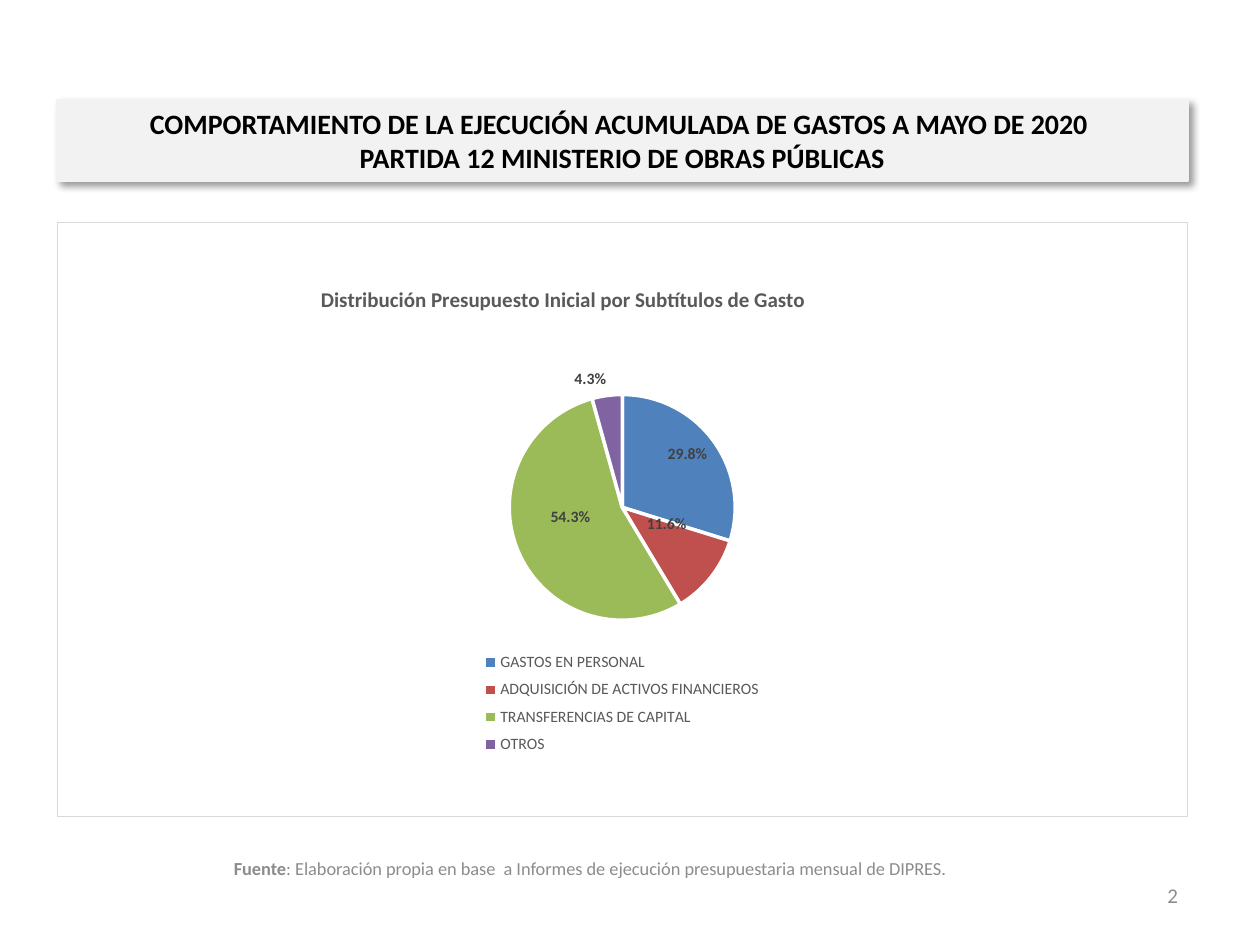
import dataclasses

import lxml.etree
import pptx
import pptx.chart.data
import pptx.dml.color
import pptx.enum.chart
import pptx.enum.shapes
import pptx.enum.text
import pptx.oxml
import pptx.oxml.ns
import pptx.util

Cm = pptx.util.Cm
Pt = pptx.util.Pt
qn = pptx.oxml.ns.qn
ALIGN = pptx.enum.text.PP_ALIGN


@dataclasses.dataclass(frozen=True)
class Theme:
    font: str = "Calibri"
    black: str = "000000"
    white: str = "FFFFFF"
    band: str = "F2F2F2"
    border: str = "D9D9D9"
    muted: str = "8C8C8C"
    chart_text: str = "595959"
    label_text: str = "404040"
    slices: tuple = ("4F81BD", "C0504D", "9BBB59", "8064A2")
    heading_size: float = 16
    chart_title_size: float = 12
    chart_size: float = 10
    small_size: float = 9
    source_size: float = 10.5
    number_size: float = 12


THEME = Theme()


def rgb(value):
    return pptx.dml.color.RGBColor.from_string(value)


def set_font(font, size, color, bold=None):
    font.name = THEME.font
    font.size = Pt(size)
    font.color.rgb = rgb(color)
    font.bold = bold


def add_heading(page, box, text):
    """Grey title band with a soft shadow."""
    band = page.shapes.add_shape(pptx.enum.shapes.MSO_SHAPE.RECTANGLE, *box)
    band.fill.solid()
    band.fill.fore_color.rgb = rgb(THEME.band)
    band.line.color.rgb = rgb(THEME.band)
    band.line.width = Pt(0.75)
    band.shadow.inherit = False
    effects = band._element.spPr.find(qn("a:effectLst"))
    shadow = lxml.etree.SubElement(
        effects, qn("a:outerShdw"), blurRad=str(Pt(4)), dist=str(Pt(3)),
        dir="2700000", algn="tl", rotWithShape="0")
    color = lxml.etree.SubElement(shadow, qn("a:srgbClr"), val=THEME.black)
    lxml.etree.SubElement(color, qn("a:alpha"), val="40000")

    frame = band.text_frame
    frame.word_wrap = True
    frame.vertical_anchor = pptx.enum.text.MSO_ANCHOR.MIDDLE
    para = frame.paragraphs[0]
    para.text = text
    para.alignment = ALIGN.CENTER
    set_font(para.font, THEME.heading_size, THEME.black, True)


def add_note(page, box, spans, size, alignment):
    """Muted one-line text; spans are (text, bold) pairs."""
    frame = page.shapes.add_textbox(*box).text_frame
    frame.word_wrap = True
    frame.vertical_anchor = pptx.enum.text.MSO_ANCHOR.MIDDLE
    para = frame.paragraphs[0]
    para.alignment = alignment
    set_font(para.font, size, THEME.muted)
    for text, bold in spans:
        span = para.add_run()
        span.text = text
        span.font.bold = bold


def manual_layout(x, y, width=None, height=None, target=None, edge=True):
    """A c:layout element, in fractions of the chart."""
    layout = lxml.etree.Element(qn("c:layout"))
    manual = lxml.etree.SubElement(layout, qn("c:manualLayout"))
    settings = [("layoutTarget", target)]
    if edge:
        settings += [("xMode", "edge"), ("yMode", "edge")]
    settings += [("x", x), ("y", y), ("w", width), ("h", height)]
    for tag, value in settings:
        if value is not None:
            lxml.etree.SubElement(manual, qn("c:" + tag), val=str(value))
    return layout


def place(parent, layout, after=None):
    """Replace the layout of a chart part, keeping the schema order."""
    for old in parent.findall(qn("c:layout")):
        parent.remove(old)
    if after is None:
        parent.insert(0, layout)
    else:
        parent.find(qn(after)).addnext(layout)


def place_label(series, index, position, shift):
    """Set the position of one percentage label and nudge it."""
    label = series.points[index].data_label
    set_font(label.font, THEME.small_size, THEME.label_text, True)
    label.position = position
    node = next(item for item in series._element.iter(qn("c:dLbl"))
                if item.find(qn("c:idx")).get("val") == str(index))
    node.find(qn("c:showVal")).set("val", "0")
    node.find(qn("c:showPercent")).set("val", "1")
    number = lxml.etree.Element(
        qn("c:numFmt"), formatCode="0.0%", sourceLinked="0")
    node.find(qn("c:txPr")).addprevious(number)
    if shift:
        place(node, manual_layout(*shift, edge=False), after="c:idx")


def add_spending_chart(page, box, title, shares):
    """Pie of spending shares with a stacked legend below."""
    data = pptx.chart.data.CategoryChartData()
    data.categories = list(shares)
    data.add_series("Series 1", list(shares.values()))
    chart = page.shapes.add_chart(
        pptx.enum.chart.XL_CHART_TYPE.PIE, *box, data).chart
    set_font(chart.font, THEME.chart_size, THEME.black)

    # Background and border
    chart._chartSpace.find(qn("c:chart")).addnext(pptx.oxml.parse_xml(
        f'<c:spPr {pptx.oxml.ns.nsdecls("c", "a")}>'
        f'<a:solidFill><a:srgbClr val="{THEME.white}"/></a:solidFill>'
        f'<a:ln w="{Pt(0.75)}"><a:solidFill><a:srgbClr val="{THEME.border}"/>'
        '</a:solidFill></a:ln></c:spPr>'))

    # Title
    chart.has_title = True
    para = chart.chart_title.text_frame.paragraphs[0]
    para.text = title
    set_font(para.font, THEME.chart_title_size, THEME.chart_text, True)
    place(chart.chart_title._element, manual_layout(0.23, 0.1), after="c:tx")

    # Legend
    chart.has_legend = True
    legend = chart.legend
    legend.position = pptx.enum.chart.XL_LEGEND_POSITION.BOTTOM
    legend.include_in_layout = False
    set_font(legend.font, THEME.small_size, THEME.chart_text)
    place(legend._element, manual_layout(0.3, 0.71, 0.4, 0.2),
          after="c:legendPos")

    # Slices
    plot = chart.plots[0]
    plot.vary_by_categories = True
    place(chart._chartSpace.chart.plotArea,
          manual_layout(0, 0.29, 1, 0.38, target="inner"))
    series = plot.series[0]
    for index, color in enumerate(THEME.slices):
        look = series.points[index].format
        look.fill.solid()
        look.fill.fore_color.rgb = rgb(color)
        look.line.color.rgb = rgb(THEME.white)
        look.line.width = Pt(2)

    # Percentages
    labels = series.data_labels
    labels.show_value = False
    labels.show_percentage = True
    labels.number_format = "0.0%"
    labels.number_format_is_linked = False
    set_font(labels.font, THEME.small_size, THEME.label_text, True)
    spot = pptx.enum.chart.XL_LABEL_POSITION
    placements = ((spot.INSIDE_END, None), (spot.CENTER, (0, -0.03)),
                  (spot.CENTER, (0, -0.02)), (spot.OUTSIDE_END, None))
    for index, (position, shift) in enumerate(placements):
        place_label(series, index, position, shift)


def main():
    deck = pptx.Presentation()
    deck.slide_width, deck.slide_height = Cm(25.4), Cm(19.05)
    page = deck.slides.add_slide(deck.slide_layouts[6])
    left, width = Cm(1.14), Cm(22.81)

    add_note(page, (Cm(1.5), Cm(17), Cm(20.8), Cm(1.02)),
             (("Fuente", True),
              (": Elaboración propia en base  a Informes de ejecución "
               "presupuestaria mensual de DIPRES.", False)),
             THEME.source_size, ALIGN.CENTER)
    add_note(page, (Cm(18.08), Cm(17.53), Cm(5.92), Cm(1.02)),
             (("2", False),), THEME.number_size, ALIGN.RIGHT)
    add_heading(page, (left, Cm(2), width, Cm(1.65)),
                "COMPORTAMIENTO DE LA EJECUCIÓN ACUMULADA DE GASTOS A MAYO "
                "DE 2020 \vPARTIDA 12 MINISTERIO DE OBRAS PÚBLICAS")
    add_spending_chart(page, (left, Cm(4.47), width, Cm(12)),
                       "Distribución Presupuesto Inicial por Subtítulos de Gasto",
                       {"GASTOS EN PERSONAL": 29.8,
                        "ADQUISICIÓN DE ACTIVOS FINANCIEROS": 11.6,
                        "TRANSFERENCIAS DE CAPITAL": 54.3,
                        "OTROS": 4.3})
    deck.save("out.pptx")


if __name__ == "__main__":
    main()
